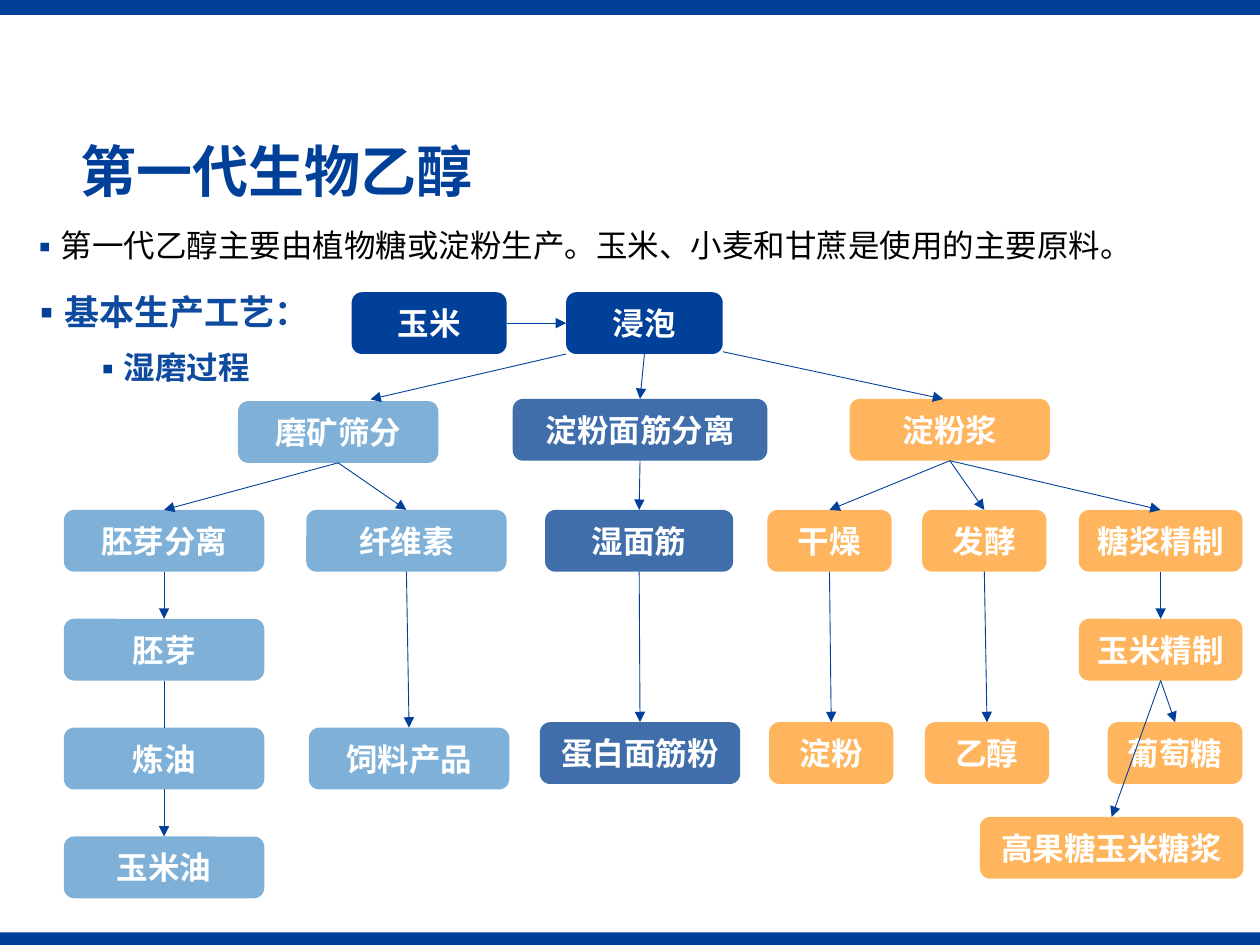
from lxml import etree
from pptx import Presentation, util as u
from pptx.dml.color import RGBColor
from pptx.enum import shapes as es, text as et
from pptx.oxml import ns

Pt = u.Pt
FONT = "Noto Sans CJK SC"
COLORS = {
    "navy": "004098", "heading": "0E4A9E", "black": "000000", "white": "FFFFFF",
    "germ": "7FB1D8", "gluten": "3F6EAA", "starch": "FFB55D",
}
SLIDE_W, SLIDE_H = 720, 540
ROW_PITCH, STEP_H = 62.2, 35.3
TOP, LEFT, BOTTOM, RIGHT = range(4)

STEPS = [
    ("玉米", 164.5, 0, 88.5, "navy"),
    ("浸泡", 287, 0, 89.5, "navy"),
    ("磨矿筛分", 99.5, 1, 114.5, "germ"),
    ("淀粉面筋分离", 256.5, 0.98, 145.5, "gluten"),
    ("淀粉浆", 449, 0.98, 114.5, "starch"),
    ("胚芽分离", 0, 2, 114.5, "germ"),
    ("胚芽", 0, 3, 114.5, "germ"),
    ("炼油", 0, 4, 114.5, "germ"),
    ("玉米油", 0, 5, 114.5, "germ"),
    ("纤维素", 138.5, 2, 114.5, "germ"),
    ("饲料产品", 140, 4, 114.5, "germ"),
    ("湿面筋", 275, 2, 107.5, "gluten"),
    ("蛋白面筋粉", 272, 3.95, 114.5, "gluten"),
    ("干燥", 402, 2, 71, "starch"),
    ("淀粉", 403, 3.95, 71, "starch"),
    ("发酵", 490.5, 2, 71, "starch"),
    ("乙醇", 492, 3.95, 71, "starch"),
    ("糖浆精制", 580, 2, 93.5, "starch"),
    ("玉米精制", 580, 3, 93.5, "starch"),
    ("葡萄糖", 596.5, 3.95, 77, "starch"),
    ("高果糖玉米糖浆", 523.5, 4.82, 150.5, "starch"),
]
FLOWS = [
    ("浸泡", ["淀粉面筋分离"]),
    ("磨矿筛分", ["胚芽分离", "纤维素"]),
    ("胚芽分离", ["胚芽"]),
    ("炼油", ["玉米油"]),
    ("纤维素", ["饲料产品"]),
    ("淀粉面筋分离", ["湿面筋"]),
    ("湿面筋", ["蛋白面筋粉"]),
    ("淀粉浆", ["干燥", "发酵", "糖浆精制"]),
    ("干燥", ["淀粉"]),
    ("发酵", ["乙醇"]),
    ("糖浆精制", ["玉米精制"]),
    ("玉米精制", ["葡萄糖", "高果糖玉米糖浆"]),
]


def rgb(color):
    return RGBColor.from_string(COLORS[color])


def add_run(paragraph, wording, size, color, bold=True):
    run = paragraph.add_run()
    run.text = wording
    run.font.size = Pt(size)
    run.font.bold = bold
    run.font.color.rgb = rgb(color)
    run.font.name = FONT
    etree.SubElement(run.font._element, ns.qn("a:ea"), typeface=FONT)


def place(placeholder, box):
    placeholder.left, placeholder.top, placeholder.width, placeholder.height = map(Pt, box)
    placeholder.text_frame.auto_size = et.MSO_AUTO_SIZE.NONE


def add_block(slide, kind, box, color):
    block = slide.shapes.add_shape(kind, *map(Pt, box))
    block.shadow.inherit = False
    block.fill.solid()
    block.fill.fore_color.rgb = rgb(color)
    block.line.fill.background()
    return block


def add_bars(slide, box):
    left, top, width, height = box
    for bar_top, bar_height in ((top, 8.5), (top + height - 7.2, 7.2)):
        add_block(slide, es.MSO_SHAPE.RECTANGLE, (left, bar_top, width, bar_height), "navy")


def add_title(slide, box):
    title = slide.shapes.title
    place(title, box)
    title.text_frame.vertical_anchor = et.MSO_ANCHOR.MIDDLE
    heading = title.text_frame.paragraphs[0]
    heading.alignment = et.PP_ALIGN.LEFT
    heading.line_spacing = 0.9
    add_run(heading, "第一代生物乙醇", 32, "navy")


def add_bullet(paragraph, margin):
    props = paragraph._p.get_or_add_pPr()
    props.set("marL", str(Pt(margin)))
    props.set("indent", str(Pt(-18)))
    bullet_color = etree.SubElement(props, ns.qn("a:buClr"))
    etree.SubElement(bullet_color, ns.qn("a:srgbClr"), val=COLORS["navy"])
    etree.SubElement(props, ns.qn("a:buFont"), typeface=FONT)
    etree.SubElement(props, ns.qn("a:buChar"), char="▪")


def add_points(slide, box):
    body = slide.placeholders[1]
    place(body, box)
    points = [
        ("第一代乙醇主要由植物糖或淀粉生产。玉米、小麦和甘蔗是使用的主要原料。", 0, 0, 18, "black", False),
        ("基本生产工艺：", 0, 10, 20, "heading", True),
        ("湿磨过程", 1, 5, 18, "heading", True),
    ]
    frame = body.text_frame
    for index, (wording, level, before, size, color, bold) in enumerate(points):
        point = frame.add_paragraph() if index else frame.paragraphs[0]
        point.level = level
        add_bullet(point, 18 + 36 * level)
        point.line_spacing = 1.2
        point.space_before = Pt(before)
        add_run(point, wording, size, color, bold)


def add_line(slide, start=(0, 0), end=(0, 0), arrow=True):
    line = slide.shapes.add_connector(es.MSO_CONNECTOR.STRAIGHT, *map(Pt, start + end))
    line.line.color.rgb = rgb("navy")
    line.line.width = Pt(0.5)
    if arrow:
        etree.SubElement(line.line._get_or_add_ln(), ns.qn("a:tailEnd"), type="triangle")
    etree.SubElement(line._element.spPr, ns.qn("a:effectLst"))
    return line


def link(slide, source, target, start_site=BOTTOM, end_site=TOP, arrow=True):
    line = add_line(slide, arrow=arrow)
    line.begin_connect(source, start_site)
    line.end_connect(target, end_site)


def add_process(slide, box):
    left, top = box[:2]
    steps = {}
    for label, x, row, width, color in STEPS:
        step = add_block(slide, es.MSO_SHAPE.ROUNDED_RECTANGLE,
                         (left + x, top + row * ROW_PITCH, width, STEP_H), color)
        frame = step.text_frame
        frame.word_wrap = True
        frame.vertical_anchor = et.MSO_ANCHOR.MIDDLE
        frame.margin_left = frame.margin_right = Pt(3)
        frame.paragraphs[0].alignment = et.PP_ALIGN.CENTER
        add_run(frame.paragraphs[0], label, 18, "white")
        steps[label] = step

    link(slide, steps["玉米"], steps["浸泡"], RIGHT, LEFT)
    link(slide, steps["胚芽"], steps["炼油"], arrow=False)
    for source, targets in FLOWS:
        for target in targets:
            link(slide, steps[source], steps[target])
    add_line(slide, (left + 287, top + 35.3), (left + 175.2, top + 61.2))
    add_line(slide, (left + 376.5, top + 34), (left + 502.5, top + 61))


def main():
    deck = Presentation()
    deck.slide_width, deck.slide_height = Pt(SLIDE_W), Pt(SLIDE_H)
    slide = deck.slides.add_slide(deck.slide_layouts[1])
    add_bars(slide, (0, 0, SLIDE_W, SLIDE_H))
    add_points(slide, (9.5, 121.5, 695.5, 398))
    add_title(slide, (39, 77, 659.5, 45.5))
    add_process(slide, (36.5, 167, 674, 346.3))
    deck.save("out.pptx")


if __name__ == "__main__":
    main()
